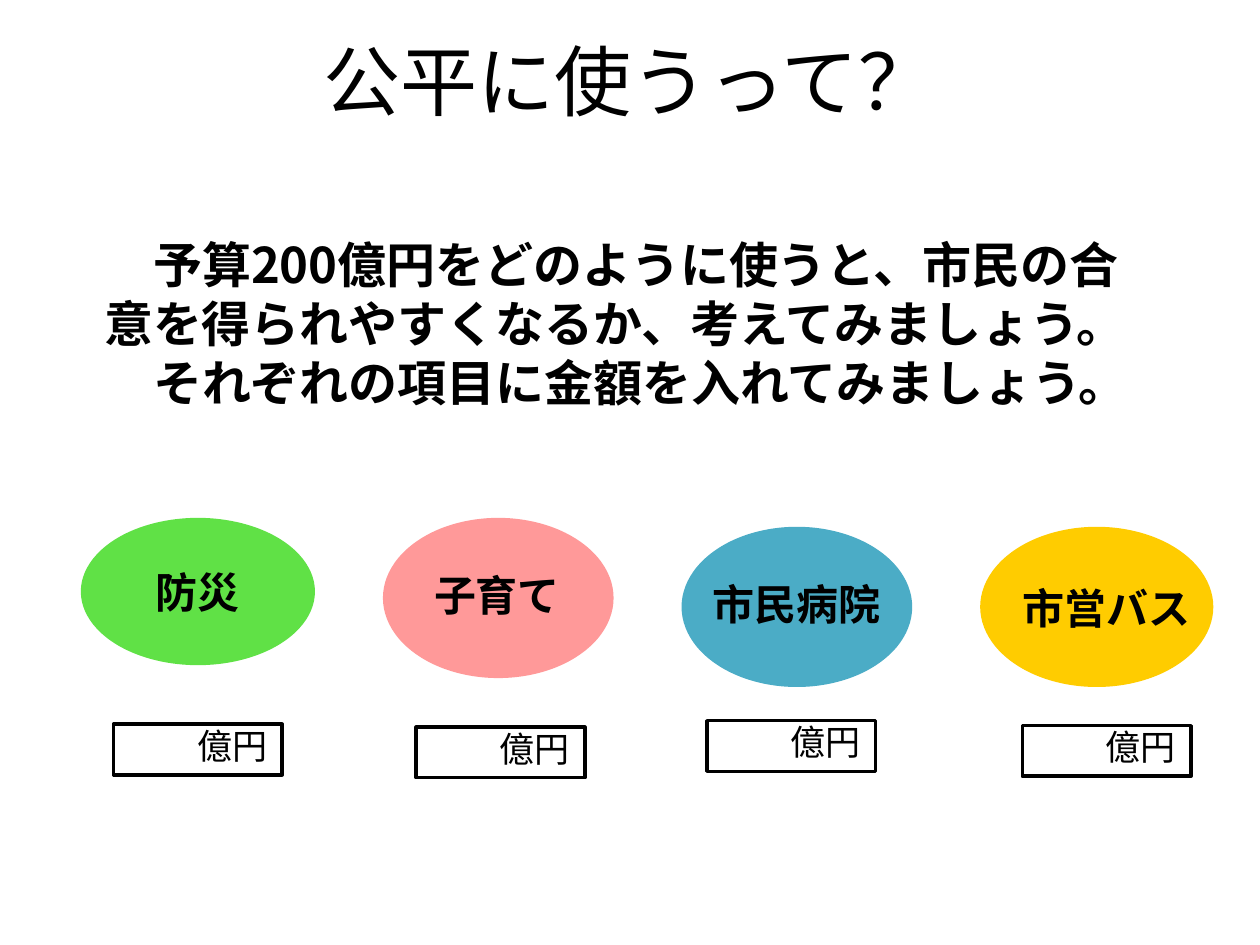
from dataclasses import dataclass

from pptx import Presentation
from pptx.dml.color import RGBColor as Rgb
from pptx.enum.shapes import MSO_SHAPE as Kind
from pptx.enum.text import MSO_ANCHOR as Anchor, PP_ALIGN as Align
from pptx.oxml.ns import qn
from pptx.util import Cm, Pt
from lxml.etree import SubElement


@dataclass(frozen=True)
class Theme:
    """Colours, type sizes and the font of the slide."""
    font: str = "Noto Sans CJK JP"
    ink: str = "000000"
    paper: str = "FFFFFF"
    green: str = "60E146"
    pink: str = "FF9999"
    blue: str = "4BACC6"
    gold: str = "FFCC00"
    title: int = 44
    body: int = 28
    label: int = 24
    unit: int = 20


THEME = Theme()


def rgb(code):
    """Turn a hex code into a colour."""
    return Rgb.from_string(code)


def style(para, size, bold=False, align=None):
    """Set the font and alignment of a paragraph."""
    font = para.font
    font.name, font.size, font.bold = THEME.font, Pt(size), bold
    font.color.rgb = rgb(THEME.ink)
    props = para._p.get_or_add_pPr()
    SubElement(props.get_or_add_defRPr(), qn("a:ea"), typeface=THEME.font)
    para.alignment = align


def inset(frame, left, top, right, low):
    """Set the four text margins in centimetres."""
    frame.margin_left, frame.margin_top = Cm(left), Cm(top)
    frame.margin_right, frame.margin_bottom = Cm(right), Cm(low)


def add_title(slide, text):
    """Place and format the title."""
    title = slide.shapes.title
    title.left, title.top = Cm(0), Cm(0)
    title.width, title.height = Cm(25.4), Cm(3.23)
    frame = title.text_frame
    frame.text, frame.vertical_anchor = text, Anchor.MIDDLE
    style(frame.paragraphs[0], THEME.title, align=Align.CENTER)


def add_body(slide, lines):
    """Add the task text with a first-line indent of one character."""
    box = slide.shapes.add_textbox(Cm(1.85), Cm(4.6), Cm(21.67), Cm(3.84))
    frame = box.text_frame
    frame.word_wrap = True
    frame.text = "\n".join(lines)
    for para in frame.paragraphs:
        style(para, THEME.body, bold=True, align=Align.LEFT)
        para._p.get_or_add_pPr().set("indent", str(Pt(THEME.body)))


def add_shape(shapes, kind, spot, fill):
    """Add a flat filled shape without an outline."""
    shape = shapes.add_shape(kind, *map(Cm, spot))
    shape.shadow.inherit = False
    shape.fill.solid()
    shape.fill.fore_color.rgb = rgb(fill)
    shape.line.fill.background()
    return shape


def add_topic(slide, text, fill, oval, area):
    """Add an oval grouped with its label."""
    group = slide.shapes.add_group_shape()
    add_shape(group.shapes, Kind.OVAL, oval, fill)
    frame = group.shapes.add_textbox(*map(Cm, area)).text_frame
    frame.word_wrap, frame.vertical_anchor = True, Anchor.MIDDLE
    inset(frame, 0.05, 0.05, 0.05, 0.05)
    frame.text = text
    para = frame.paragraphs[0]
    style(para, THEME.label, bold=True, align=Align.CENTER)
    para.line_spacing = 0.9


def add_sum(slide, left, top):
    """Add a framed box for an amount of money."""
    spot = (left, top, 3.4, 1.02)
    shape = add_shape(slide.shapes, Kind.RECTANGLE, spot, THEME.paper)
    shape.line.color.rgb, shape.line.width = rgb(THEME.ink), Pt(2)
    frame = shape.text_frame
    frame.vertical_anchor = Anchor.TOP
    inset(frame, 0, 0, 0.3, 0)
    frame.text = "億円"
    style(frame.paragraphs[0], THEME.unit, align=Align.RIGHT)


def main():
    """Build and save the slide."""
    deck = Presentation()
    deck.slide_width, deck.slide_height = Cm(25.4), Cm(19.05)
    slide = deck.slides.add_slide(deck.slide_layouts[5])
    add_title(slide, "公平に使うって？")
    add_body(slide, (
        "予算200億円をどのように使うと、市民の合意を得られやすくなるか、考えてみましょう。",
        "それぞれの項目に金額を入れてみましょう。",
    ))
    topics = (
        ("防災", THEME.green, (1.63, 10.44, 4.72, 2.97),
         (1.63, 11.05, 4.72, 1.9), (2.29, 14.6)),
        ("子育て", THEME.pink, (7.72, 10.44, 4.65, 3.23),
         (8.38, 10.92, 3.28, 2.26), (8.39, 14.66)),
        ("市民病院", THEME.blue, (13.74, 10.62, 4.65, 3.23),
         (14.25, 11.07, 3.61, 2.31), (14.25, 14.53)),
        ("市営バス", THEME.gold, (19.76, 10.62, 4.7, 3.23),
         (20.52, 11.23, 3.58, 2.18), (20.61, 14.63)),
    )
    for text, fill, oval, area, corner in topics:
        add_topic(slide, text, fill, oval, area)
        add_sum(slide, *corner)
    deck.save("out.pptx")


if __name__ == "__main__":
    main()
